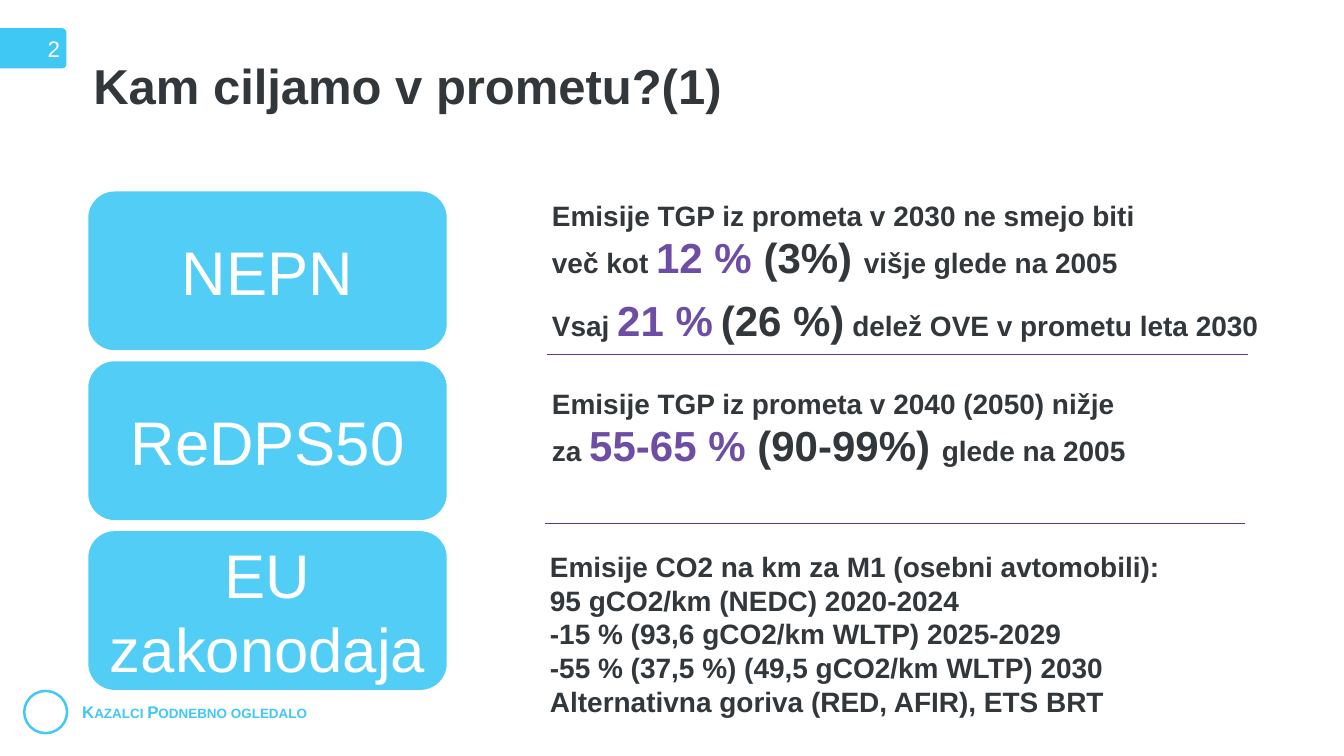
from dataclasses import dataclass

import lxml.etree
import pptx
import pptx.dml.color
import pptx.enum.shapes
import pptx.enum.text
import pptx.oxml.ns
import pptx.util

Cm = pptx.util.Cm
Pt = pptx.util.Pt
Shape = pptx.enum.shapes.MSO_SHAPE
Align = pptx.enum.text.PP_ALIGN

SKY, DARK, VIOLET, RULE, WHITE = "40C8F4", "31373B", "6E4DA4", "5A3793", "FFFFFF"
BODY, FIGURE = 40, 60


@dataclass
class Span:
    """A stretch of text with its size and colour."""
    text: str
    size: float = BODY
    color: str = DARK


@dataclass
class Block:
    """A text box given in centimetres, with one list of spans per paragraph."""
    left: float
    top: float
    width: float
    height: float
    lines: list[list[Span]]


@dataclass
class Rule:
    """A horizontal separator given in centimetres."""
    left: float
    right: float
    top: float


CARDS = ["NEPN", "ReDPS50", "EU zakonodaja"]
CARD_LEFT, CARD_TOP, CARD_WIDTH, CARD_HEIGHT, CARD_PITCH = 4.45, 9.65, 18.06, 8, 8.56

TITLE = Block(4.45, 3, 58.4, 7.37, [[Span("Kam ciljamo v prometu?(1)", 70)]])
FOOTER = Block(3.89, 35.26, 14.58, 1.27, [[Span("Kazalci Podnebno ogledalo", 24, SKY)]])

GOALS = [
    Block(27.56, 9.86, 30.56, 4.52, [[
        Span("Emisije TGP iz prometa v 2030 ne smejo biti več kot "),
        Span("12 % ", FIGURE, VIOLET),
        Span("(3%) ", FIGURE),
        Span("višje glede na 2005"),
    ]]),
    Block(27.56, 14.71, 37.11, 2.82, [[
        Span("Vsaj "),
        Span("21 %", FIGURE, VIOLET),
        Span(" "),
        Span("(26 %)", FIGURE),
        Span(" delež OVE v prometu leta 2030"),
    ]]),
    Block(27.56, 19.33, 30.56, 4.52, [[
        Span("Emisije TGP iz prometa v 2040 (2050) nižje za "),
        Span("55-65 %", FIGURE, VIOLET),
        Span(" (90-99%) ", FIGURE),
        Span("glede na 2005"),
    ]]),
    Block(27.46, 27.58, 32.84, 8.81, [
        [Span("Emisije CO2 na km za M1 (osebni avtomobili):")],
        [Span("95 gCO2/km (NEDC) 2020-2024")],
        [Span("-15 % (93,6 gCO2/km WLTP) 2025-2029")],
        [Span("-55 % (37,5 %) (49,5 gCO2/km WLTP) 2030")],
        [Span("Alternativna goriva (RED, AFIR), ETS BRT")],
    ]),
]
RULES = [Rule(27.56, 62.86, 17.86), Rule(27.46, 62.74, 26.39)]


def paint(target, color: str) -> None:
    """Give a font, or the solid fill of a shape or line, a hex colour."""
    if hasattr(target, "solid"):
        target.solid()
        target = target.fore_color
    else:
        target = target.color
    target.rgb = pptx.dml.color.RGBColor.from_string(color)


def write_paragraph(para, spans: list[Span], bold: bool) -> None:
    """Write spans into a paragraph, sharing the font where they agree."""
    para.font.name = "Arial"
    para.font.bold = bold
    mixed = len(spans) > 1
    for item in spans:
        span = para.add_run()
        span.text = item.text
        font = span.font if mixed else para.font
        font.size = Pt(item.size)
        paint(font, item.color)


def add_block(page, block: Block):
    """Add a wrapped text box with bold text."""
    box = page.shapes.add_textbox(Cm(block.left), Cm(block.top), Cm(block.width), Cm(block.height))
    frame = box.text_frame
    frame.word_wrap = True
    for index, spans in enumerate(block.lines):
        para = frame.paragraphs[0] if index == 0 else frame.add_paragraph()
        write_paragraph(para, spans, True)
    return box


def add_panel(page, left: float, top: float, width: float, height: float, label: Span, align):
    """Add a sky-blue rounded rectangle with a label."""
    panel = page.shapes.add_shape(Shape.ROUNDED_RECTANGLE, Cm(left), Cm(top), Cm(width), Cm(height))
    panel.shadow.inherit = False
    paint(panel.fill, SKY)
    panel.line.fill.background()
    frame = panel.text_frame
    frame.word_wrap = True
    frame.vertical_anchor = pptx.enum.text.MSO_ANCHOR.MIDDLE
    para = frame.paragraphs[0]
    para.alignment = align
    write_paragraph(para, [label], False)
    return panel


def set_opacity(shape, percent: int) -> None:
    """Make the solid fill of a shape partly transparent."""
    qn = pptx.oxml.ns.qn
    color = shape._element.spPr.find(qn("a:solidFill")).find(qn("a:srgbClr"))
    lxml.etree.SubElement(color, qn("a:alpha")).set("val", str(percent * 1000))


def add_rule(page, rule: Rule) -> None:
    """Add a thin horizontal line."""
    line = page.shapes.add_connector(
        pptx.enum.shapes.MSO_CONNECTOR.STRAIGHT,
        Cm(rule.left), Cm(rule.top), Cm(rule.right), Cm(rule.top))
    paint(line.line.fill, RULE)
    line.line.width = Pt(0.5)
    lxml.etree.SubElement(line._element.spPr, pptx.oxml.ns.qn("a:effectLst"))


def add_ring(page) -> None:
    """Add the outlined circle beside the footer."""
    ring = page.shapes.add_shape(Shape.OVAL, Cm(1.22), Cm(34.82), Cm(2.16), Cm(2.13))
    ring.shadow.inherit = False
    ring.fill.background()
    paint(ring.line.fill, SKY)
    ring.line.width = Pt(3.5)


def main() -> None:
    """Build the slide and save it."""
    deck = pptx.Presentation()
    deck.slide_width, deck.slide_height = Cm(67.72), Cm(38.1)
    page = deck.slides.add_slide(deck.slide_layouts[6])

    footer = add_block(page, FOOTER)
    footer.text_frame.paragraphs[0].runs[0]._r.get_or_add_rPr().set("cap", "small")
    add_ring(page)
    title = add_block(page, TITLE)
    title.text_frame.paragraphs[0].line_spacing = 0.9
    badge = add_panel(page, -1.3, 1.42, 4.65, 2.03, Span("2", 32, WHITE), Align.RIGHT)
    badge.adjustments[0] = 0.11

    for index, name in enumerate(CARDS):
        card = add_panel(page, CARD_LEFT, CARD_TOP + index * CARD_PITCH, CARD_WIDTH, CARD_HEIGHT,
                         Span(name, 88, WHITE), Align.CENTER)
        set_opacity(card, 90)
    for goal in GOALS:
        add_block(page, goal)
    for rule in RULES:
        add_rule(page, rule)

    deck.save("out.pptx")


if __name__ == "__main__":
    main()
